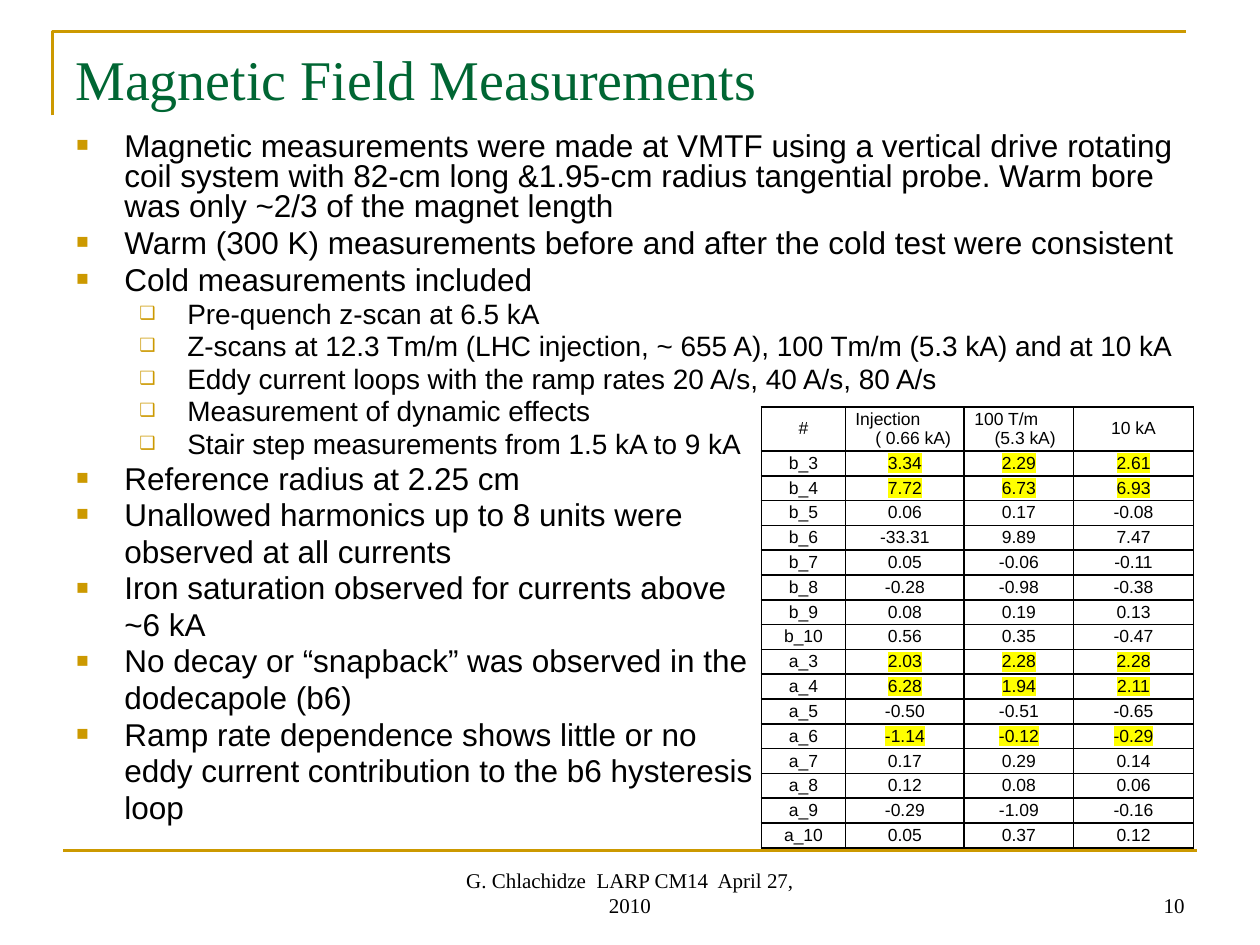
from lxml.etree import SubElement
from pptx import Presentation
from pptx.dml.color import RGBColor
from pptx.enum.shapes import MSO_CONNECTOR
from pptx.enum.text import MSO_ANCHOR, PP_ALIGN
from pptx.oxml.ns import qn
from pptx.util import Inches, Pt

COLS, ROWS = 120, 90  # layout grid on the 10 x 7.5 inch slide
BLACK, GOLD, GREEN, YELLOW = "000000", "CC9900", "006633", "FFFF00"
SERIF, SANS = "Times New Roman", "Arial"


def rgb(value):
    return RGBColor.from_string(value)


def add_color(parent, value):
    SubElement(parent, qn("a:srgbClr"), val=value)


def write(p, text, size=18, font=SANS, color=BLACK, align=PP_ALIGN.LEFT, highlight=None):
    p.alignment = align
    r = p.add_run()
    r.text = text
    r.font.size = Pt(size)
    r.font.color.rgb = rgb(color)
    if highlight:
        add_color(SubElement(r.font._element, qn("a:highlight")), highlight)
    r.font.name = font


def indent(p, left=0, first=0, right=0):
    pPr = p._p.get_or_add_pPr()
    for name, value in (("marL", left), ("marR", right), ("indent", first)):
        pPr.set(name, str(Inches(value)))


def add_bullet(p, char):
    pPr = p._p.get_or_add_pPr()
    add_color(SubElement(pPr, qn("a:buClr")), GOLD)
    SubElement(pPr, qn("a:buSzPct"), val="65000")
    SubElement(pPr, qn("a:buFont"), typeface=SANS)
    SubElement(pPr, qn("a:buChar"), char=char)


def add_borders(cell):
    tcPr = cell._tc.get_or_add_tcPr()
    for i, side in enumerate(("lnL", "lnR", "lnT", "lnB")):
        ln = SubElement(tcPr, qn(f"a:{side}"), w=str(Pt(1)))
        add_color(SubElement(ln, qn("a:solidFill")), BLACK)
        tcPr.insert(i, ln)  # borders come before the fill


class SlideBuilder:
    def __init__(self, prs):
        self.w, self.h = prs.slide_width, prs.slide_height
        self.s = prs.slides.add_slide(prs.slide_layouts[6])

    def x(self, col):
        return round(self.w * col / COLS)

    def y(self, row):
        return round(self.h * row / ROWS)

    def box(self, col, row, width, height):
        return self.x(col), self.y(row), self.x(width), self.y(height)

    def style_line(self, line):
        line.color.rgb = rgb(GOLD)
        line.width = Pt(1.5)

    def corner(self, points):
        (x0, y0), *rest = [(self.x(c), self.y(r)) for c, r in points]
        fb = self.s.shapes.build_freeform(x0, y0)
        fb.add_line_segments(rest, close=False)
        sp = fb.convert_to_shape()
        sp.shadow.inherit = False
        sp.fill.background()
        self.style_line(sp.line)

    def rule(self, col, row, end):
        cn = self.s.shapes.add_connector(
            MSO_CONNECTOR.STRAIGHT, self.x(col), self.y(row), self.x(end), self.y(row))
        self.style_line(cn.line)
        SubElement(cn._element.spPr, qn("a:effectLst"))

    def frame(self, box, anchor=MSO_ANCHOR.TOP, inset=0.1):
        tf = self.s.shapes.add_textbox(*self.box(*box)).text_frame
        tf.word_wrap = True
        tf.vertical_anchor = anchor
        tf.margin_left = tf.margin_right = Inches(inset)
        return tf

    def text(self, box, text, anchor=MSO_ANCHOR.TOP, inset=0.1, **fmt):
        write(self.frame(box, anchor, inset).paragraphs[0], text, **fmt)

    def outline(self, box, items):
        tf = self.frame(box)
        for i, (kind, text) in enumerate(items):
            p = tf.paragraphs[0] if i == 0 else tf.add_paragraph()
            size, left, char = OUTLINE_STYLES[kind]
            p.level = 1 if kind == "sub" else 0
            p.line_spacing = 0.8
            p.space_before = Pt(0.2 * size if i else 0)
            indent(p, left, -0.38 if char else 0)
            if char:
                add_bullet(p, char)
            write(p, text, size=size)

    def table(self, box, widths, header_height, header, rows, marked):
        gf = self.s.shapes.add_table(len(rows) + 1, len(widths), *self.box(*box))
        t = gf.table
        t.first_row = t.horz_banding = False
        for column, width in zip(t.columns, widths):
            column.width = Inches(width)
        t.rows[0].height = self.y(header_height)
        for row in list(t.rows)[1:]:
            row.height = self.y((box[3] - header_height) / len(rows))
        for i, values in enumerate([header, *rows]):
            for j, lines in enumerate(values):
                hl = YELLOW if j and values[0] in marked else None
                self.cell(t.cell(i, j), lines, hl)

    def cell(self, cell, lines, highlight):
        cell.fill.background()
        add_borders(cell)
        cell.vertical_anchor = MSO_ANCHOR.MIDDLE
        cell.margin_left = cell.margin_right = Inches(0.07)
        cell.margin_top = cell.margin_bottom = 0
        tf = cell.text_frame
        if isinstance(lines, str):
            lines = [(lines, 0, 0)]
        for k, (text, left, right) in enumerate(lines):
            p = tf.add_paragraph() if k else tf.paragraphs[0]
            indent(p, left, right=right)
            write(p, text, size=10, align=PP_ALIGN.CENTER, highlight=highlight)


# kind: size, left indent, bullet
OUTLINE_STYLES = {"main": (18, 0.38, "■"), "more": (18, 0.38, None), "sub": (16, 0.88, "❑")}

OUTLINE = [
    ("main", "Magnetic measurements were made at VMTF using a vertical drive rotating coil system "
             "with 82-cm long &1.95-cm radius tangential probe. Warm bore was only ~2/3 of the "
             "magnet length"),
    ("main", "Warm (300 K) measurements before and after the cold test were consistent"),
    ("main", "Cold measurements included"),
    ("sub", "Pre-quench z-scan at 6.5 kA"),
    ("sub", "Z-scans at 12.3 Tm/m (LHC injection, ~ 655 A), 100 Tm/m (5.3 kA) and at 10 kA"),
    ("sub", "Eddy current loops with the ramp rates 20 A/s, 40 A/s, 80 A/s"),
    ("sub", "Measurement of dynamic effects"),
    ("sub", "Stair step measurements from 1.5 kA to 9 kA"),
    ("main", "Reference radius at 2.25 cm"),
    ("main", "Unallowed harmonics up to 8 units were"),
    ("more", "observed at all currents"),
    ("main", "Iron saturation observed for currents above"),
    ("more", "~6 kA"),
    ("main", "No decay or “snapback” was observed in the"),
    ("more", "dodecapole (b6)"),
    ("main", "Ramp rate dependence shows little or no"),
    ("more", "eddy current contribution to the b6 hysteresis"),
    ("more", "loop"),
]

# Header lines: text, left indent, right indent
HEADER = ["#", [("Injection", 0, 0.27), ("( 0.66 kA)", 0.13, 0)],
          [("100 T/m", 0, 0.2), ("(5.3 kA)", 0.1, 0)], "10 kA"]
HARMONICS = [line.split() for line in """b_3 3.34 2.29 2.61
b_4 7.72 6.73 6.93
b_5 0.06 0.17 -0.08
b_6 -33.31 9.89 7.47
b_7 0.05 -0.06 -0.11
b_8 -0.28 -0.98 -0.38
b_9 0.08 0.19 0.13
b_10 0.56 0.35 -0.47
a_3 2.03 2.28 2.28
a_4 6.28 1.94 2.11
a_5 -0.50 -0.51 -0.65
a_6 -1.14 -0.12 -0.29
a_7 0.17 0.29 0.14
a_8 0.12 0.08 0.06
a_9 -0.29 -1.09 -0.16
a_10 0.05 0.37 0.12""".splitlines()]
MARKED = ("b_3", "b_4", "a_3", "a_4", "a_6")


def main():
    prs = Presentation()
    prs.slide_width, prs.slide_height = Inches(10), Inches(7.5)
    b = SlideBuilder(prs)

    # Frame lines
    b.corner([(5, 11), (5, 3), (113, 3)])
    b.rule(6, 81, 114)

    # Footer and page number
    footer = dict(anchor=MSO_ANCHOR.BOTTOM, size=12, font=SERIF)
    b.text((41, 82, 38, 6), "G. Chlachidze  LARP CM14  April 27, 2010",
           inset=0.2, align=PP_ALIGN.CENTER, **footer)
    b.text((86, 82, 28, 6), "10", align=PP_ALIGN.RIGHT, **footer)

    # Title and outline
    b.text((6, 3.6, 108, 15), "Magnetic Field Measurements", size=32, font=SERIF, color=GREEN)
    b.outline((6.1, 12.1, 107.6, 68), OUTLINE)

    # Harmonics table
    b.table((72.5, 38.75, 41.2, 42), (0.67, 0.94, 0.87, 0.95), 4.2, HEADER, HARMONICS, MARKED)

    prs.save("out.pptx")


if __name__ == "__main__":
    main()
